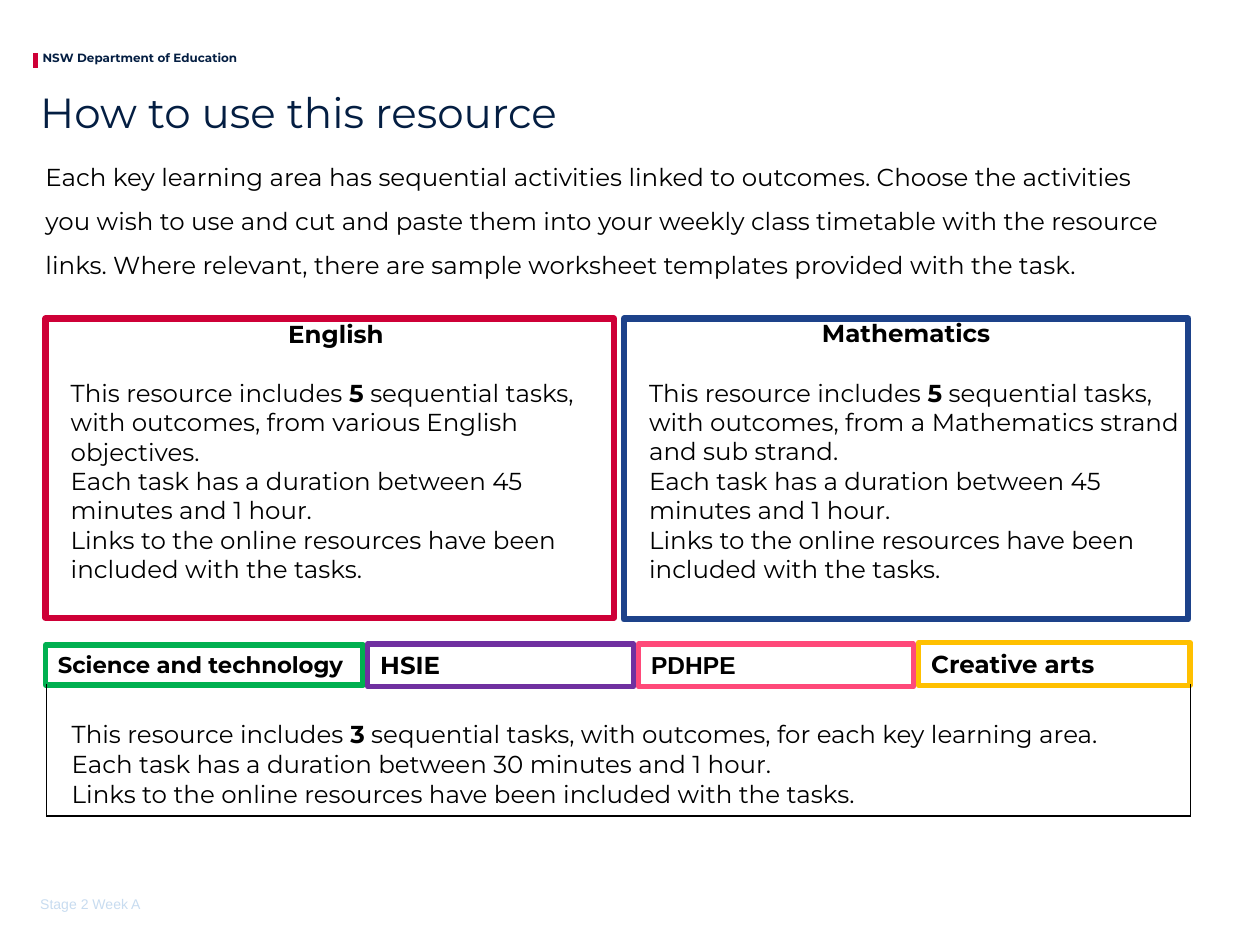
from dataclasses import dataclass

from lxml import etree
from pptx import Presentation
from pptx.dml.color import RGBColor
from pptx.enum import shapes, text
from pptx.oxml.ns import qn
from pptx.util import Pt

COLOURS = {
    "navy": "041E42", "black": "000000", "red": "CE0037", "blue": "1D428A",
    "green": "00B050", "purple": "7030A0", "pink": "FF4979",
    "yellow": "FFC000", "pale": "C8DCF0",
}
FONT = "Montserrat"
LINE_HEIGHT = 17
LINKS = "Links to the online resources have been included with the tasks."


@dataclass(frozen=True)
class Box:
    left: float
    top: float
    width: float
    height: float

    def lengths(self):
        return [Pt(v) for v in (self.left, self.top, self.width, self.height)]


@dataclass(frozen=True)
class Subject:
    name: str
    colour: str
    box: Box
    outcomes: str
    heading_indent: float = 0


@dataclass(frozen=True)
class Label:
    name: str
    colour: str
    box: Box
    size: float = 14
    font: str = FONT


SUBJECTS = [
    Subject("English", "red", Box(26, 182, 325, 171),
            "from various English objectives.", 7),
    Subject("Mathematics", "blue", Box(356.5, 182, 322.5, 172),
            "from a Mathematics strand and sub strand."),
]
LABELS = [
    Label("Science and technology", "green", Box(26, 368.5, 181.5, 23), 13),
    Label("HSIE", "purple", Box(210.2, 368, 152, 24.5)),
    Label("PDHPE", "pink", Box(365, 368, 157, 24.5), font="Arial"),
    Label("Creative arts", "yellow", Box(525, 367.2, 155, 24.5)),
]


def rgb(name: str) -> RGBColor:
    return RGBColor.from_string(COLOURS[name])


def style(paragraph, size=14, colour="black", font=FONT, bold=None):
    paragraph.font.size = Pt(size)
    paragraph.font.name = font
    paragraph.font.color.rgb = rgb(colour)
    if bold is not None:
        paragraph.font.bold = bold


def set_frame(frame, insets=(0, 0, 0, 0), anchor=text.MSO_ANCHOR.TOP):
    """Set wrapping, anchor and insets (left, top, right, bottom)."""
    frame.word_wrap = True
    frame.auto_size = text.MSO_AUTO_SIZE.NONE
    frame.vertical_anchor = anchor
    (frame.margin_left, frame.margin_top,
     frame.margin_right, frame.margin_bottom) = map(Pt, insets)


def place(shape, box: Box):
    shape.left, shape.top, shape.width, shape.height = box.lengths()


def indent(paragraph, left: float):
    properties = paragraph._p.get_or_add_pPr()
    properties.set("marL", str(Pt(left)))
    properties.set("indent", "0")


def write_tasks(paragraphs, count: str, outcomes: str, duration: str, left: float):
    """Fill three paragraphs with the task count, duration and links."""
    includes, lasts, links = paragraphs
    for words in ("This resource includes ", count,
                  f" sequential tasks, with outcomes, {outcomes}"):
        run = includes.add_run()
        run.text = words
        run.font.bold = words == count
    lasts.text = f"Each task has a duration between {duration} and 1 hour."
    links.text = LINKS
    for paragraph in paragraphs:
        indent(paragraph, left)
        paragraph.alignment = text.PP_ALIGN.LEFT
        style(paragraph)


def add_outline(slide, box: Box, colour: str, weight: float):
    outline = slide.shapes.add_shape(shapes.MSO_SHAPE.RECTANGLE, *box.lengths())
    outline.shadow.inherit = False
    outline.fill.background()
    outline.line.color.rgb = rgb(colour)
    outline.line.width = Pt(weight)
    return outline.text_frame


def add_subject(slide, subject: Subject):
    frame = add_outline(slide, subject.box, subject.colour, 3.5)
    set_frame(frame)
    heading = frame.paragraphs[0]
    heading.text = subject.name
    heading.alignment = text.PP_ALIGN.CENTER
    indent(heading, subject.heading_indent)
    style(heading, bold=True)
    tasks = [frame.add_paragraph() for _ in range(3)]
    write_tasks(tasks, "5", subject.outcomes, "45 minutes", 14.4)
    tasks[0].space_before = Pt(LINE_HEIGHT)


def add_label(slide, label: Label):
    frame = add_outline(slide, label.box, label.colour, 3)
    set_frame(frame, (7.2, 3.6, 7.2, 3.6))
    name = frame.paragraphs[0]
    name.text = label.name
    name.alignment = text.PP_ALIGN.LEFT
    style(name, label.size, font=label.font, bold=True)


def add_text(slide, box: Box, words: str, anchor=text.MSO_ANCHOR.TOP, **look):
    frame = slide.shapes.add_textbox(*box.lengths()).text_frame
    set_frame(frame, anchor=anchor)
    frame.text = words
    style(frame.paragraphs[0], **look)


def set_border(cell, side: str, colour: str | None):
    line = etree.SubElement(cell._tc.get_or_add_tcPr(), qn(f"a:ln{side}"), w=str(Pt(1)))
    if colour is None:
        etree.SubElement(line, qn("a:noFill"))
    else:
        fill = etree.SubElement(line, qn("a:solidFill"))
        etree.SubElement(fill, qn("a:srgbClr"), val=COLOURS[colour])


def add_area_table(slide, box: Box):
    table = slide.shapes.add_table(1, 1, *box.lengths()).table
    table.first_row = table.horz_banding = False
    cell = table.cell(0, 0)
    for side, colour in {"L": "black", "R": "black", "T": None, "B": "black"}.items():
        set_border(cell, side, colour)
    cell.fill.background()
    cell.margin_top = Pt(3.6 + LINE_HEIGHT)
    frame = cell.text_frame
    tasks = [frame.paragraphs[0], frame.add_paragraph(), frame.add_paragraph()]
    write_tasks(tasks, "3", "for each key learning area.", "30 minutes", 7.2)


def add_department(slide):
    bar = slide.shapes.add_connector(
        shapes.MSO_CONNECTOR.STRAIGHT, Pt(20.2), Pt(30.2), Pt(20.2), Pt(38.9))
    bar.line.color.rgb = rgb("red")
    bar.line.width = Pt(2.5)
    etree.SubElement(bar._element.spPr, qn("a:effectLst"))
    add_text(slide, Box(24.3, 29, 146, 8), "NSW Department of Education",
             size=6.8, colour="navy", bold=True)


def fill_placeholders(slide):
    title, introduction = slide.placeholders
    place(title, Box(23, 46, 679, 39.6))
    set_frame(title.text_frame, anchor=text.MSO_ANCHOR.MIDDLE)
    title.text_frame.text = "How to use this resource"
    heading = title.text_frame.paragraphs[0]
    heading.alignment = text.PP_ALIGN.LEFT
    heading.line_spacing = 0.9
    style(heading, 24, "navy")

    place(introduction, Box(26, 80.6, 652.5, 94.3))
    set_frame(introduction.text_frame, (0, 3.6, 7.2, 3.6))
    introduction.text_frame.text = (
        "Each key learning area has sequential activities linked to outcomes. "
        "Choose the activities you wish to use and cut and paste them into your "
        "weekly class timetable with the resource links. Where relevant, there "
        "are sample worksheet templates provided with the task.")
    advice = introduction.text_frame.paragraphs[0]
    indent(advice, 0)
    advice.line_spacing = 1.5
    advice.space_before = Pt(0)
    etree.SubElement(advice._p.get_or_add_pPr(), qn("a:buNone"))
    style(advice)


def main():
    deck = Presentation()
    deck.slide_width, deck.slide_height = Pt(720), Pt(540)
    slide = deck.slides.add_slide(deck.slide_layouts[1])
    fill_placeholders(slide)
    add_department(slide)
    for subject in SUBJECTS:
        add_subject(slide, subject)
    for label in LABELS:
        add_label(slide, label)
    add_area_table(slide, Box(26.6, 391, 653.8, 74.9))
    add_text(slide, Box(23, 492.5, 66, 28.8), "Stage 2 Week A",
             text.MSO_ANCHOR.BOTTOM, size=8, colour="pale", font="Arial")
    deck.save("out.pptx")


if __name__ == "__main__":
    main()
